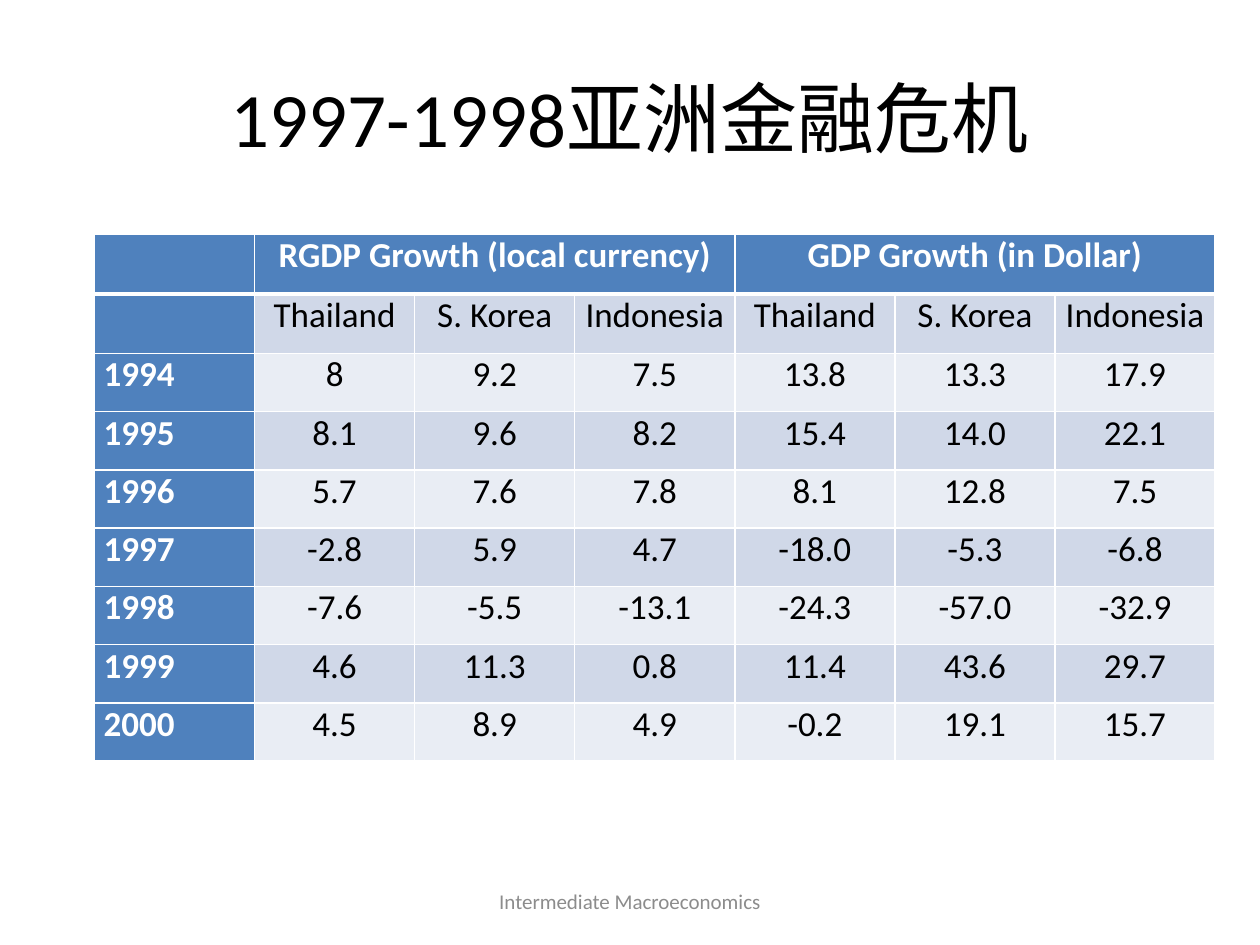
from dataclasses import dataclass

from lxml import etree
from pptx import Presentation
from pptx import util as u
from pptx.dml import color
from pptx.enum import text
from pptx.oxml import ns

Pt = u.Pt
ALIGN = text.PP_ALIGN


@dataclass(frozen=True)
class Theme:
    font: str = "Calibri"
    white: str = "FFFFFF"
    black: str = "000000"
    gray: str = "8C8C8C"
    blue: str = "4F81BD"
    dark: str = "D0D8E8"
    light: str = "E9EDF4"
    title: float = 44
    body: float = 20
    foot: float = 12


@dataclass(frozen=True)
class Box:
    left: float
    top: float
    width: float
    height: float

    def rect(self) -> tuple:
        return Pt(self.left), Pt(self.top), Pt(self.width), Pt(self.height)


@dataclass(frozen=True)
class Year:
    name: str
    rates: str


THEME = Theme()
PAGE = Box(0, 0, 720, 540)
TITLE = Box(36, 21.6, 648, 90)
GRID = Box(54, 134, 640.5, 301.1)
FOOT = Box(246, 500.5, 228, 28.8)
HEAD_ROW, BODY_ROW = 34, 33.3
GROUPS = ("RGDP Growth (local currency)", "GDP Growth (in Dollar)")
LANDS = ("Thailand", "S. Korea", "Indonesia")
YEARS = (
    Year("1994", "8 9.2 7.5 13.8 13.3 17.9"),
    Year("1995", "8.1 9.6 8.2 15.4 14.0 22.1"),
    Year("1996", "5.7 7.6 7.8 8.1 12.8 7.5"),
    Year("1997", "-2.8 5.9 4.7 -18.0 -5.3 -6.8"),
    Year("1998", "-7.6 -5.5 -13.1 -24.3 -57.0 -32.9"),
    Year("1999", "4.6 11.3 0.8 11.4 43.6 29.7"),
    Year("2000", "4.5 8.9 4.9 -0.2 19.1 15.7"),
)


def write(frame, words: str, *, size: float, ink: str = THEME.black,
          bold: bool = False, align=ALIGN.CENTER) -> None:
    line = frame.paragraphs[0]
    line.alignment = align
    run = line.add_run()
    run.text = words
    run.font.name = THEME.font
    run.font.size = Pt(size)
    run.font.bold = bold
    run.font.color.rgb = color.RGBColor.from_string(ink)


def edge(cell, base: float) -> None:
    props = cell._tc.get_or_add_tcPr()
    sides = {"lnL": 1, "lnR": 1, "lnT": 1, "lnB": base}
    for spot, (tag, width) in enumerate(sides.items()):
        line = etree.Element(ns.qn(f"a:{tag}"), w=str(Pt(width)))
        fill = etree.SubElement(line, ns.qn("a:solidFill"))
        etree.SubElement(fill, ns.qn("a:srgbClr"), val=THEME.white)
        props.insert(spot, line)


def paint(cell, words: str, row: int, col: int) -> None:
    head = row == 0 or col == 0
    band = THEME.dark if row % 2 else THEME.light
    cell.fill.solid()
    cell.fill.fore_color.rgb = color.RGBColor.from_string(
        THEME.blue if head else band)
    cell.margin_left = cell.margin_right = Pt(5.25)
    cell.margin_top = cell.margin_bottom = 0
    edge(cell, 1 if row else 3)
    if words:
        write(cell.text_frame, words, size=THEME.body, bold=head,
              ink=THEME.white if head else THEME.black,
              align=ALIGN.CENTER if row == 0 or col else ALIGN.JUSTIFY)


def draw_grid(slide) -> None:
    top = [""]
    for group in GROUPS:
        top += [group] + [""] * (len(LANDS) - 1)
    rows = [top, ["", *LANDS * len(GROUPS)]]
    rows += [[year.name, *year.rates.split()] for year in YEARS]
    grid = slide.shapes.add_table(len(rows), len(top), *GRID.rect()).table
    grid.first_row = grid.horz_banding = False
    for col in grid.columns:
        col.width = Pt(GRID.width / len(top))
    for row, words in enumerate(rows):
        grid.rows[row].height = Pt(BODY_ROW if row > 1 else HEAD_ROW)
        for col, word in enumerate(words):
            paint(grid.cell(row, col), word, row, col)
    for col in range(1, len(top), len(LANDS)):
        grid.cell(0, col).merge(grid.cell(0, col + len(LANDS) - 1))


def main() -> None:
    deck = Presentation()
    deck.slide_width, deck.slide_height = Pt(PAGE.width), Pt(PAGE.height)
    slide = deck.slides.add_slide(deck.slide_layouts[5])
    title = slide.shapes.title
    title.left, title.top, title.width, title.height = TITLE.rect()
    title.text_frame.vertical_anchor = text.MSO_ANCHOR.MIDDLE
    write(title.text_frame, "1997-1998亚洲金融危机", size=THEME.title)
    draw_grid(slide)
    foot = slide.shapes.add_textbox(*FOOT.rect()).text_frame
    foot.word_wrap = True
    foot.vertical_anchor = text.MSO_ANCHOR.MIDDLE
    write(foot, "Intermediate Macroeconomics", size=THEME.foot, ink=THEME.gray)
    deck.save("out.pptx")


if __name__ == "__main__":
    main()
